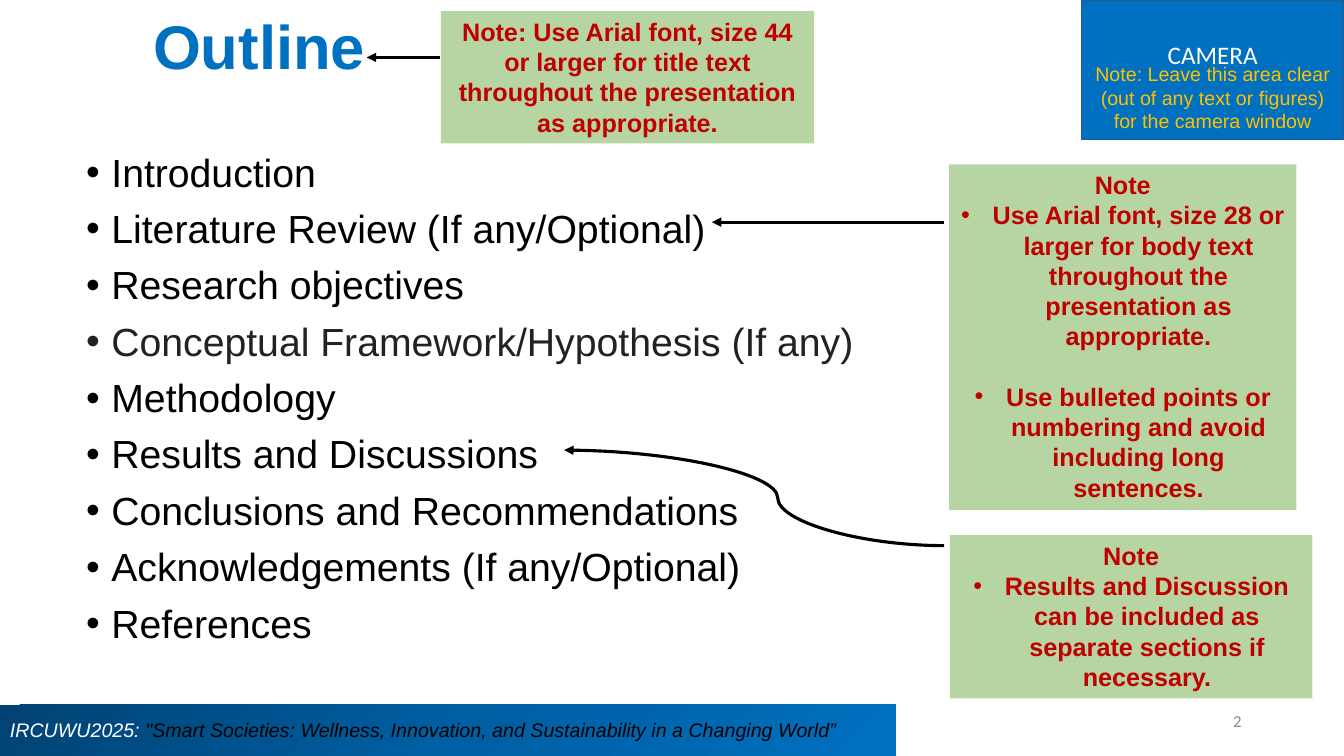
from copy import deepcopy

from lxml import etree
from pptx import Presentation
from pptx.dml.color import RGBColor
from pptx.enum.shapes import MSO_CONNECTOR as LINK, MSO_SHAPE
from pptx.enum.text import MSO_ANCHOR as ANCHOR, PP_ALIGN as ALIGN
from pptx.oxml.ns import qn
from pptx.util import Pt

COLORS = {
    "blue": "0070C0", "edge": "325491", "navy": "004272", "mid blue": "005EA2",
    "white": "FFFFFF", "black": "000000", "charcoal": "222222", "gray": "8C8C8C",
    "gold": "FFC000", "red": "C00000", "green": "70AD47",
}


def color(name):
    return RGBColor.from_string(COLORS[name])


def write(box, text, size=18, ink="black", font="Arial", bold=False, italic=False,
          align=ALIGN.LEFT, anchor=ANCHOR.TOP, indent=0, before=0, spacing=None):
    """Add one paragraph to a box; an indent makes it a bullet."""
    frame = box.text_frame
    frame.word_wrap = True
    frame.vertical_anchor = anchor
    para = frame.paragraphs[0]
    if para.runs:
        para = frame.add_paragraph()
        para.space_before = Pt(before)
    para.alignment = align
    if spacing:
        para.line_spacing = spacing
    if indent:
        props = para._p.get_or_add_pPr()
        props.set("marL", str(Pt(indent)))
        props.set("indent", str(-Pt(indent)))
        etree.SubElement(props, qn("a:buFont")).set("typeface", "Arial")
        etree.SubElement(props, qn("a:buChar")).set("char", "•")
    span = para.add_run()
    span.text = text
    span.font.name, span.font.size = font, Pt(size)
    span.font.bold, span.font.italic = bold, italic
    span.font.color.rgb = color(ink)
    return para


deck = Presentation()
deck.slide_width, deck.slide_height = Pt(960), Pt(540)
page = deck.slides.add_slide(deck.slide_layouts[6])
shapes = page.shapes

# Camera area
camera = shapes.add_shape(MSO_SHAPE.RECTANGLE, Pt(772.5), 0, Pt(187.5), Pt(99.5))
camera.shadow.inherit = False
camera.fill.solid()
camera.fill.fore_color.rgb = color("blue")
camera.line.color.rgb = color("edge")
camera.line.width = Pt(1)
camera.text_frame.margin_bottom = Pt(25.5)
write(camera, "CAMERA", ink="white", font="Calibri", align=ALIGN.CENTER, anchor=ANCHOR.MIDDLE)
camera_note = shapes.add_textbox(Pt(772.5), Pt(41), Pt(187.5), Pt(58.5))
write(camera_note, "Note: Leave this area clear (out of any text or figures) for the camera window",
      size=14, ink="gold", align=ALIGN.CENTER)

# Footer band
footer = shapes.add_shape(MSO_SHAPE.RECTANGLE, 0, Pt(503.3), Pt(640), Pt(36.3))
footer.shadow.inherit = False
footer.line.fill.background()
footer.fill.gradient()
footer.fill.gradient_angle = 315
stop_list = footer._element.spPr.find(qn("a:gradFill")).find(qn("a:gsLst"))
stop_list.insert(1, deepcopy(stop_list[0]))
for stop, position, name in zip(footer.fill.gradient_stops, (0, 0.5, 1), ("navy", "mid blue", "blue")):
    stop.position = position
    stop.color.rgb = color(name)
para = write(footer, "IRCUWU2025: ", size=14, ink="white", italic=True, anchor=ANCHOR.MIDDLE)
theme = para.add_run()
theme.text = '"Smart Societies: Wellness, Innovation, and Sustainability in a Changing World”'
theme.font.name, theme.font.size, theme.font.italic = "Arial", Pt(14), True
theme.font.color.rgb = color("black")

# Title, outline and page number
title = shapes.add_textbox(Pt(102.3), 0, Pt(799), Pt(70.5))
write(title, "Outline", size=44, ink="blue", bold=True, anchor=ANCHOR.MIDDLE, spacing=0.9)

outline = shapes.add_textbox(Pt(54.5), Pt(106), Pt(889), Pt(365))
for topic in (
    "Introduction",
    "Literature Review (If any/Optional)",
    "Research objectives",
    "Conceptual Framework/Hypothesis (If any)",
    "Methodology",
    "Results and Discussions",
    "Conclusions and Recommendations",
    "Acknowledgements (If any/Optional)",
    "References",
):
    ink = "charcoal" if topic.startswith("Conceptual") else "black"
    write(outline, topic, size=28, ink=ink, indent=18, before=10, spacing=0.9)

number = shapes.add_textbox(Pt(678), Pt(500.5), Pt(216), Pt(28.75))
write(number, "2", size=12, ink="gray", font="Calibri", align=ALIGN.RIGHT, anchor=ANCHOR.MIDDLE)

# Green notes: place, heading, bullets
notes = [
    ((315, 8, 266.5, 94.5),
     "Note: Use Arial font, size 44 or larger for title text throughout the presentation as appropriate.",
     []),
    ((678, 117.5, 248, 247), "Note",
     ["Use Arial font, size 28 or larger for body text throughout the presentation as appropriate.",
      "Use bulleted points or numbering and avoid including long sentences."]),
    ((678.5, 382.3, 259, 116.5), "Note",
     ["Results and Discussion can be included as separate sections if necessary."]),
]
for place, heading, bullets in notes:
    note = shapes.add_shape(MSO_SHAPE.RECTANGLE, *map(Pt, place))
    note.shadow.inherit = False
    note.line.fill.background()
    note.fill.solid()
    note.fill.fore_color.rgb = color("green")
    tint = note._element.spPr.find(qn("a:solidFill"))[0]
    etree.SubElement(tint, qn("a:alpha")).set("val", "50000")
    write(note, heading, ink="red", bold=True, align=ALIGN.CENTER)
    for index, bullet in enumerate(bullets):
        write(note, bullet, ink="red", bold=True, align=ALIGN.CENTER,
              indent=22.5, before=21.6 * index)

# Arrows from the notes to the text they explain
arrows = [
    (LINK.STRAIGHT, (314, 41, 262, 41)),
    (LINK.STRAIGHT, (674.5, 158.7, 508.5, 158.7)),
    (LINK.CURVE, (674.5, 389.8, 403, 321.6)),
]
for kind, ends in arrows:
    arrow = shapes.add_connector(kind, *map(Pt, ends))
    arrow.line.color.rgb = color("black")
    arrow.line.width = Pt(2.25)
    props = arrow._element.spPr
    etree.SubElement(props.find(qn("a:ln")), qn("a:tailEnd")).set("type", "triangle")
    etree.SubElement(props, qn("a:effectLst"))
    if kind == LINK.CURVE:
        guides = props.find(qn("a:prstGeom")).find(qn("a:avLst"))
        bend = etree.SubElement(guides, qn("a:gd"))
        bend.set("name", "adj1")
        bend.set("fmla", "val 43800")

deck.save("out.pptx")
